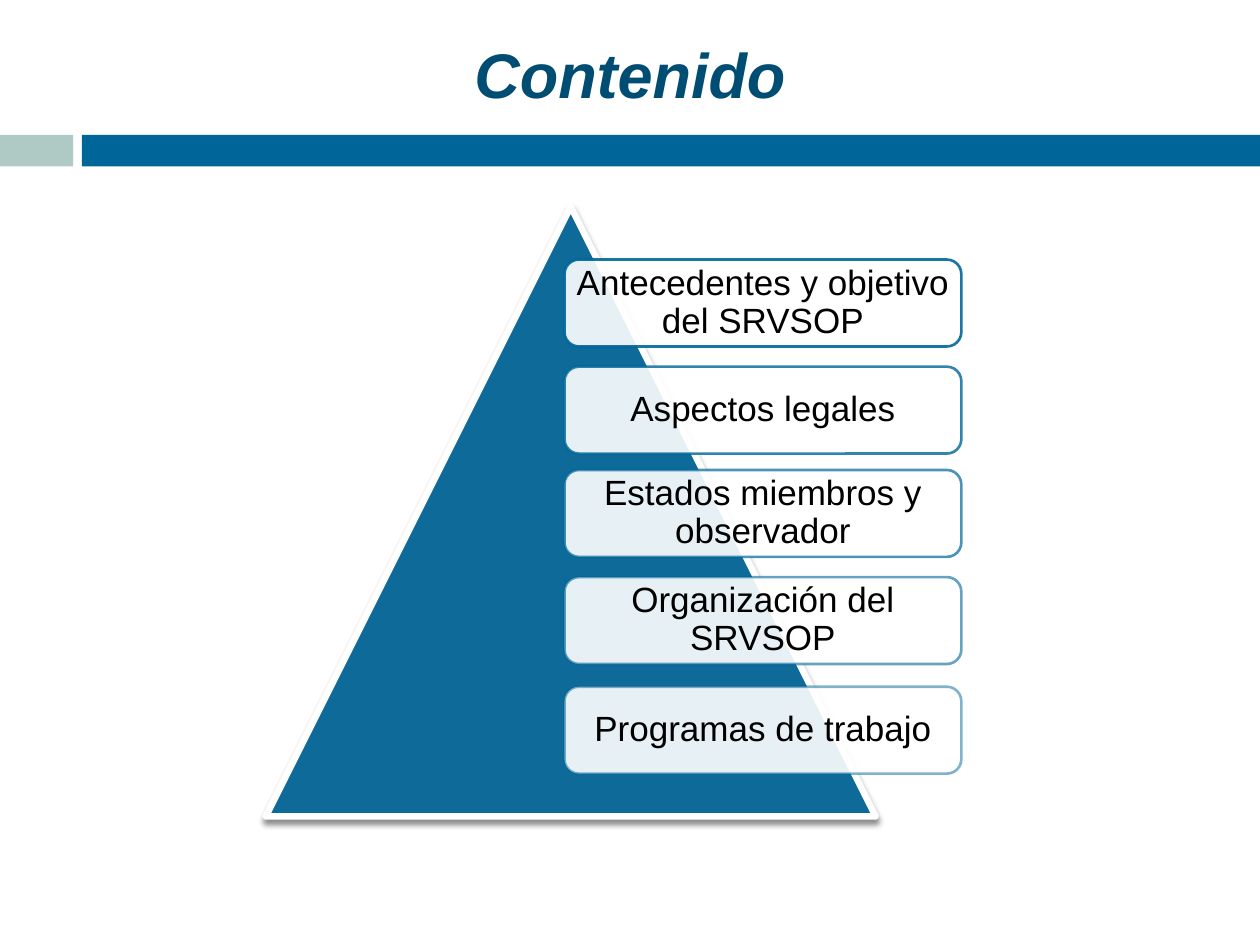
from dataclasses import dataclass

from lxml import etree
from pptx import Presentation
from pptx.dml.color import RGBColor
from pptx.enum.shapes import MSO_SHAPE
from pptx.enum.text import MSO_ANCHOR, PP_ALIGN
from pptx.oxml.ns import qn
from pptx.util import Inches, Pt

RECT, ROUNDED = MSO_SHAPE.RECTANGLE, MSO_SHAPE.ROUNDED_RECTANGLE
TRIANGLE = MSO_SHAPE.ISOSCELES_TRIANGLE
CENTER, MIDDLE = PP_ALIGN.CENTER, MSO_ANCHOR.MIDDLE

COLORS = {"blue": "006699", "navy": "004D73", "sage": "AFCAC4",
          "white": "FFFFFF", "black": "000000"}
WIDTH, HEIGHT = 10, 7.5
BAND_TOP, BAND_HEIGHT = 1.07, 0.25
CARD_LEFT, CARD_WIDTH, CARD_HEIGHT = 4.48, 3.15, 0.69


@dataclass(frozen=True)
class Topic:
    text: str
    top: float


TOPICS = [
    Topic("Antecedentes y objetivo del SRVSOP", 2.06),
    Topic("Aspectos legales", 2.91),
    Topic("Estados miembros y observador", 3.73),
    Topic("Organización del SRVSOP", 4.58),
    Topic("Programas de trabajo", 5.45),
]


def set_color(fill, color: str, alpha: int = 100) -> None:
    """Make a fill solid, with alpha as a percentage of opacity."""
    fill.solid()
    fill.fore_color.rgb = RGBColor.from_string(COLORS[color])
    if alpha < 100:
        node = fill._xPr.find(".//" + qn("a:srgbClr"))
        etree.SubElement(node, qn("a:alpha"), val=str(alpha * 1000))


def add_box(s, kind, left: float, top: float, width: float, height: float,
            color: str, alpha: int = 100, line: str = "",
            line_width: float = 0, line_alpha: int = 100):
    sp = s.shapes.add_shape(kind, Inches(left), Inches(top),
                            Inches(width), Inches(height))
    set_color(sp.fill, color, alpha)
    if line:
        sp.line.width = Pt(line_width)
        set_color(sp.line.fill, line, line_alpha)
    else:
        sp.line.fill.background()
    sp.shadow.inherit = False
    return sp


def add_drop_shadow(sp) -> None:
    effects = sp._element.spPr.find(qn("a:effectLst"))
    shadow = etree.SubElement(effects, qn("a:outerShdw"), blurRad=str(Pt(3)),
                              dist=str(Pt(2.4)), dir="5400000", rotWithShape="0")
    color = etree.SubElement(shadow, qn("a:srgbClr"), val=COLORS["black"])
    etree.SubElement(color, qn("a:alpha"), val="45000")


def write(sp, text: str, *, size: float, color: str, bold: bool = False,
          italic: bool = False, spacing: float = 1, inset: float = 0.04) -> None:
    tf = sp.text_frame
    tf.word_wrap = True
    tf.vertical_anchor = MIDDLE
    tf.margin_left = tf.margin_right = Inches(inset)
    tf.margin_top = tf.margin_bottom = Inches(inset)
    p = tf.paragraphs[0]
    p.alignment = CENTER
    p.line_spacing = spacing
    r = p.add_run()
    r.text = text
    r.font.name = "Arial"
    r.font.size = Pt(size)
    r.font.bold, r.font.italic = bold, italic
    r.font.color.rgb = RGBColor.from_string(COLORS[color])


def main() -> None:
    prs = Presentation()
    prs.slide_width, prs.slide_height = Inches(WIDTH), Inches(HEIGHT)
    s = prs.slides.add_slide(prs.slide_layouts[6])

    add_box(s, RECT, 0, BAND_TOP, 0.58, BAND_HEIGHT, "sage")
    add_box(s, RECT, 0.65, BAND_TOP, WIDTH - 0.65, BAND_HEIGHT, "blue")

    title = s.shapes.add_textbox(Inches(0.54), Inches(0.25),
                                 Inches(8.92), Inches(0.67))
    write(title, "Contenido", size=36, color="navy", bold=True, italic=True)

    pyramid = add_box(s, TRIANGLE, 2.11, 1.64, 4.84, 4.84, "blue", 90,
                      line="white", line_width=3.75)
    add_drop_shadow(pyramid)

    for i, topic in enumerate(TOPICS):
        card = add_box(s, ROUNDED, CARD_LEFT, topic.top, CARD_WIDTH, CARD_HEIGHT,
                       "white", 90, line="blue", line_width=1.5,
                       line_alpha=90 - 10 * i)
        write(card, topic.text, size=20, color="black", spacing=0.9)

    prs.save("out.pptx")


if __name__ == "__main__":
    main()
